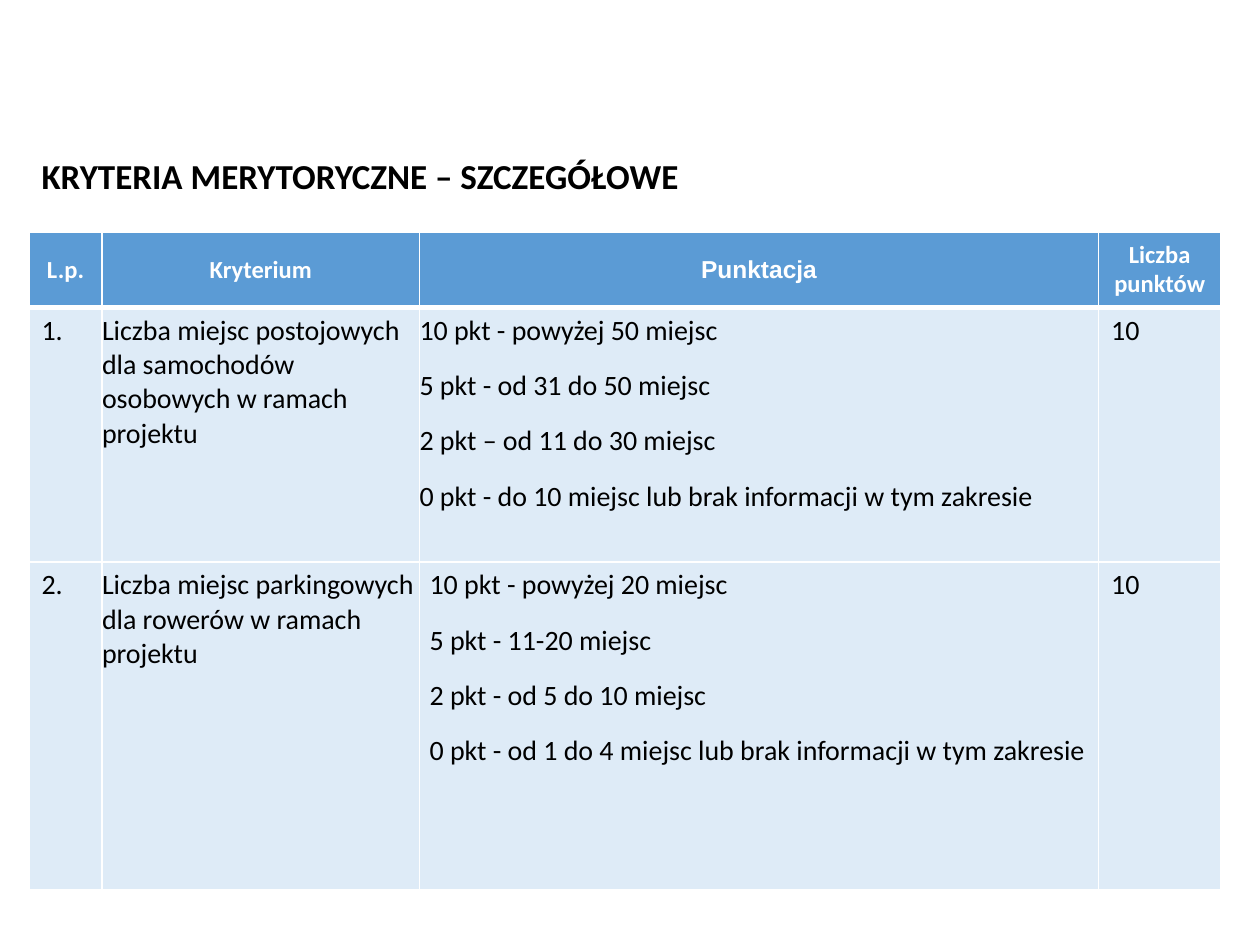
from pptx import Presentation
from pptx.dml.color import RGBColor
from pptx.enum.text import MSO_ANCHOR, MSO_AUTO_SIZE, PP_ALIGN
from pptx.oxml.ns import qn
from pptx.util import Inches, Pt
from lxml import etree

BLACK = RGBColor(0x00, 0x00, 0x00)
WHITE = RGBColor(0xFF, 0xFF, 0xFF)
BLUE = RGBColor(0x5B, 0x9B, 0xD5)
PALE_BLUE = RGBColor(0xDE, 0xEB, 0xF7)
LEFT, CENTER = PP_ALIGN.LEFT, PP_ALIGN.CENTER
TOP, MIDDLE = MSO_ANCHOR.TOP, MSO_ANCHOR.MIDDLE
FIT_SHAPE = MSO_AUTO_SIZE.SHAPE_TO_FIT_TEXT

COL_WIDTHS = [0.58, 2.52, 5.39, 0.97]
ROW_HEIGHTS = [0.6, 2.02, 2.6]
HEADERS = [("L.p.", "Calibri"), ("Kryterium", "Calibri"),
           ("Punktacja", "Arial"), ("Liczba punktów", "Calibri")]
CRITERIA = [
    ("1.", "Liczba miejsc postojowych dla samochodów osobowych w ramach projektu",
     ["10 pkt - powyżej 50 miejsc", "5 pkt - od 31 do 50 miejsc",
      "2 pkt – od 11 do 30 miejsc",
      "0 pkt - do 10 miejsc lub brak informacji w tym zakresie"], 0, "10"),
    ("2.", "Liczba miejsc parkingowych dla rowerów w ramach projektu",
     ["10 pkt - powyżej 20 miejsc", "5 pkt - 11-20 miejsc",
      "2 pkt - od 5 do 10 miejsc",
      "0 pkt - od 1 do 4 miejsc lub brak informacji w tym zakresie"], 0.08, "10"),
]


def add_run(p, text, size, color, bold=False, font="Calibri"):
    r = p.add_run()
    r.text = text
    r.font.name = font
    r.font.size = Pt(size)
    r.font.bold = bold
    r.font.color.rgb = color


def add_title(s, text):
    sp = s.shapes.title
    sp.left, sp.top, sp.width, sp.height = map(Inches, (0.23, 1.17, 5.42, 0.44))
    tf = sp.text_frame
    tf.word_wrap = False
    tf.auto_size = FIT_SHAPE
    tf.vertical_anchor = MIDDLE
    p = tf.paragraphs[0]
    p.alignment = LEFT
    add_run(p, text, 20, BLACK, bold=True)


def set_borders(cell, top, bottom):
    tc_pr = cell._tc.get_or_add_tcPr()
    for side, width in (("L", 1), ("R", 1), ("T", top), ("B", bottom)):
        ln = etree.SubElement(tc_pr, qn(f"a:ln{side}"), w=str(Pt(width)))
        fill = etree.SubElement(ln, qn("a:solidFill"))
        etree.SubElement(fill, qn("a:srgbClr"), val=str(WHITE))


def style_cell(cell, color, anchor, top=1, bottom=1):
    set_borders(cell, top, bottom)
    cell.fill.solid()
    cell.fill.fore_color.rgb = color
    cell.vertical_anchor = anchor


def fill_header(cell, text, font):
    style_cell(cell, BLUE, MIDDLE, bottom=3)
    p = cell.text_frame.paragraphs[0]
    p.alignment = CENTER
    add_run(p, text, 14, WHITE, bold=True, font=font)


def fill_body(cell, lines, top, margin=0.1, gap=0):
    style_cell(cell, PALE_BLUE, TOP, top=top)
    cell.margin_left = cell.margin_right = Inches(margin)
    tf = cell.text_frame
    for i, line in enumerate(lines):
        p = tf.add_paragraph() if i else tf.paragraphs[0]
        p.alignment = LEFT
        p.space_before = Pt(gap if i else 0)
        p.space_after = Pt(gap)
        add_run(p, line, 16, BLACK)


def add_criteria_table(s):
    frame = s.shapes.add_table(len(ROW_HEIGHTS), len(COL_WIDTHS), Inches(0.23),
                               Inches(1.84), Inches(sum(COL_WIDTHS)),
                               Inches(sum(ROW_HEIGHTS)))
    table = frame.table
    for column, width in zip(table.columns, COL_WIDTHS):
        column.width = Inches(width)
    for row, height in zip(table.rows, ROW_HEIGHTS):
        row.height = Inches(height)
    for col, (text, font) in enumerate(HEADERS):
        fill_header(table.cell(0, col), text, font)
    for row, (number, criterion, scores, margin, points) in enumerate(CRITERIA, 1):
        top = 3 if row == 1 else 1
        fill_body(table.cell(row, 0), [number], top)
        fill_body(table.cell(row, 1), [criterion], top, margin=0, gap=6)
        fill_body(table.cell(row, 2), scores, top, margin=margin, gap=6)
        fill_body(table.cell(row, 3), [points], top)


def main():
    prs = Presentation()
    prs.slide_width, prs.slide_height = Inches(10), Inches(7.5)
    s = prs.slides.add_slide(prs.slide_layouts[5])
    add_title(s, "KRYTERIA MERYTORYCZNE – SZCZEGÓŁOWE")
    add_criteria_table(s)
    prs.save("out.pptx")


if __name__ == "__main__":
    main()
